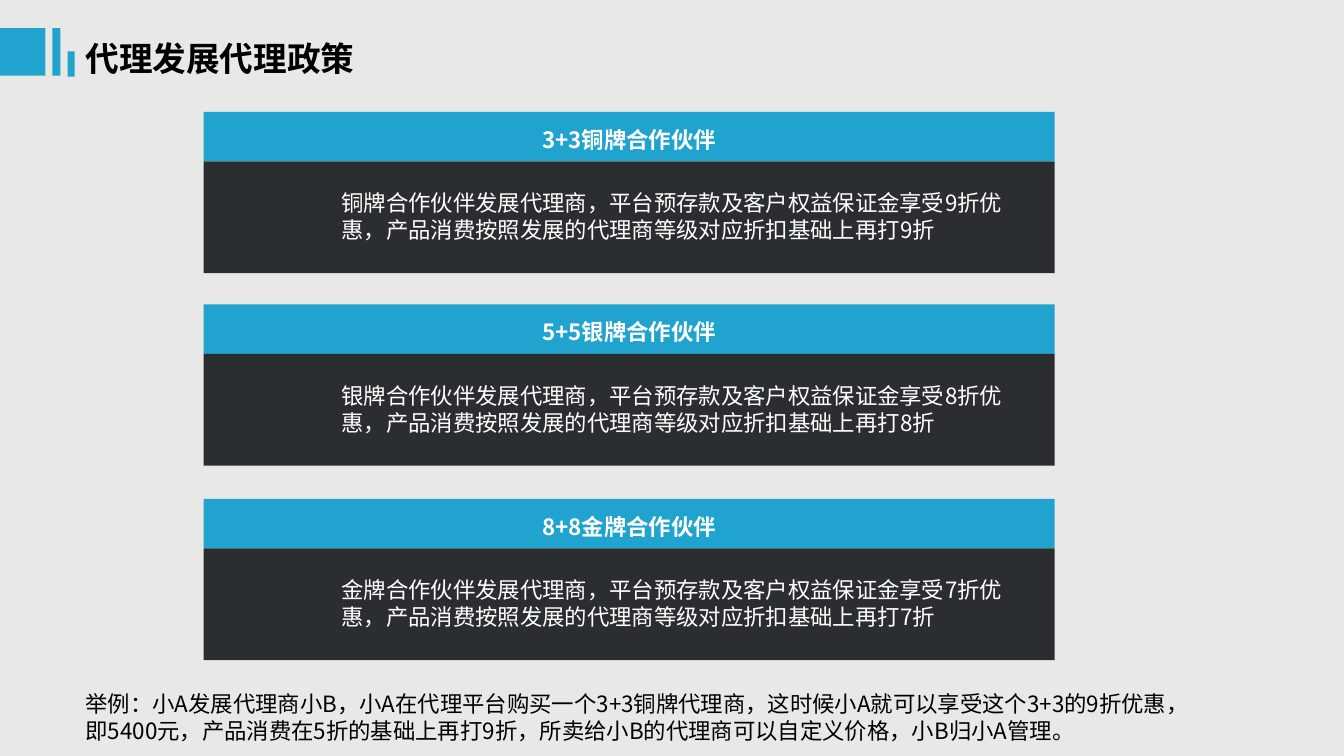
from lxml.etree import SubElement
from pptx import Presentation
from pptx.dml.color import RGBColor
from pptx.enum.shapes import MSO_SHAPE
from pptx.enum.text import MSO_ANCHOR, MSO_AUTO_SIZE, PP_ALIGN
from pptx.oxml.ns import qn
from pptx.util import Inches, Pt

FONT = "Noto Sans CJK SC"
BLUE, DARK, PAPER = "21A3D0", "2B2E30", "E8E8E6"
WHITE, BLACK = "FFFFFF", "000000"

CARD_LEFT, CARD_WIDTH = 2.02, 8.44
HEADER_HEIGHT, BODY_HEIGHT = 0.49, 1.11
TITLE_BARS = [(0, 0.28, 0.45, 0.47), (0.52, 0.28, 0.08, 0.47), (0.67, 0.51, 0.07, 0.25)]
# top, plan, medal, discount
PARTNERS = [(1.11, "3+3", "铜牌", 9), (3.02, "5+5", "银牌", 8), (4.95, "8+8", "金牌", 7)]
EXAMPLE = (
    "举例：小A发展代理商小B，小A在代理平台购买一个3+3铜牌代理商，这时候小A就可以享受这个3+3的9折优惠，"
    "即5400元，产品消费在5折的基础上再打9折，所卖给小B的代理商可以自定义价格，小B归小A管理。"
)


def rgb(value):
    return RGBColor.from_string(value)


def write(tf, text, size, color, bold=False):
    """Fill the frame with one paragraph, in the same font for Latin and Chinese."""
    tf.word_wrap = True
    p = tf.paragraphs[0]
    p.text = text
    font = p.font
    font.name, font.size, font.bold = FONT, Pt(size), bold
    font.color.rgb = rgb(color)
    SubElement(font._element, qn("a:ea"), typeface=FONT)
    return p


def add_bar(shapes, left, top, width, height, color):
    sp = shapes.add_shape(MSO_SHAPE.RECTANGLE, Inches(left), Inches(top),
                          Inches(width), Inches(height))
    sp.shadow.inherit = False
    sp.fill.solid()
    sp.fill.fore_color.rgb = rgb(color)
    sp.line.fill.background()
    return sp


def add_text(shapes, left, top, width, height, text, size, color, bold=False):
    tf = shapes.add_textbox(Inches(left), Inches(top), Inches(width), Inches(height)).text_frame
    write(tf, text, size, color, bold)
    tf.auto_size = MSO_AUTO_SIZE.SHAPE_TO_FIT_TEXT


def add_partner_card(slide, top, plan, medal, discount):
    shapes = slide.shapes.add_group_shape().shapes
    header = add_bar(shapes, CARD_LEFT, top, CARD_WIDTH, HEADER_HEIGHT, BLUE)
    header.text_frame.vertical_anchor = MSO_ANCHOR.MIDDLE
    p = write(header.text_frame, f"{plan}{medal}合作伙伴", 16, WHITE, bold=True)
    p.alignment = PP_ALIGN.CENTER
    p.line_spacing = 1.2

    body_top = top + HEADER_HEIGHT
    add_bar(shapes, CARD_LEFT, body_top, CARD_WIDTH, BODY_HEIGHT, DARK)
    policy = (f"{medal}合作伙伴发展代理商，平台预存款及客户权益保证金享受{discount}折优惠，"
              f"产品消费按照发展的代理商等级对应折扣基础上再打{discount}折")
    add_text(shapes, 3.29, body_top + 0.23, 6.75, 0.65, policy, 16, WHITE)


def main():
    prs = Presentation()
    prs.slide_width, prs.slide_height = Inches(13.33), Inches(7.5)
    s = prs.slides.add_slide(prs.slide_layouts[6])
    s.background.fill.solid()
    s.background.fill.fore_color.rgb = rgb(PAPER)

    for bar in TITLE_BARS:
        add_bar(s.shapes, *bar, BLUE)
    add_text(s.shapes, 0.75, 0.33, 2.96, 0.53, "代理发展代理政策", 24, BLACK, bold=True)
    for partner in PARTNERS:
        add_partner_card(s, *partner)
    add_text(s.shapes, 0.75, 6.8, 11.34, 0.65, EXAMPLE, 16, BLACK)

    prs.save("out.pptx")


if __name__ == "__main__":
    main()
